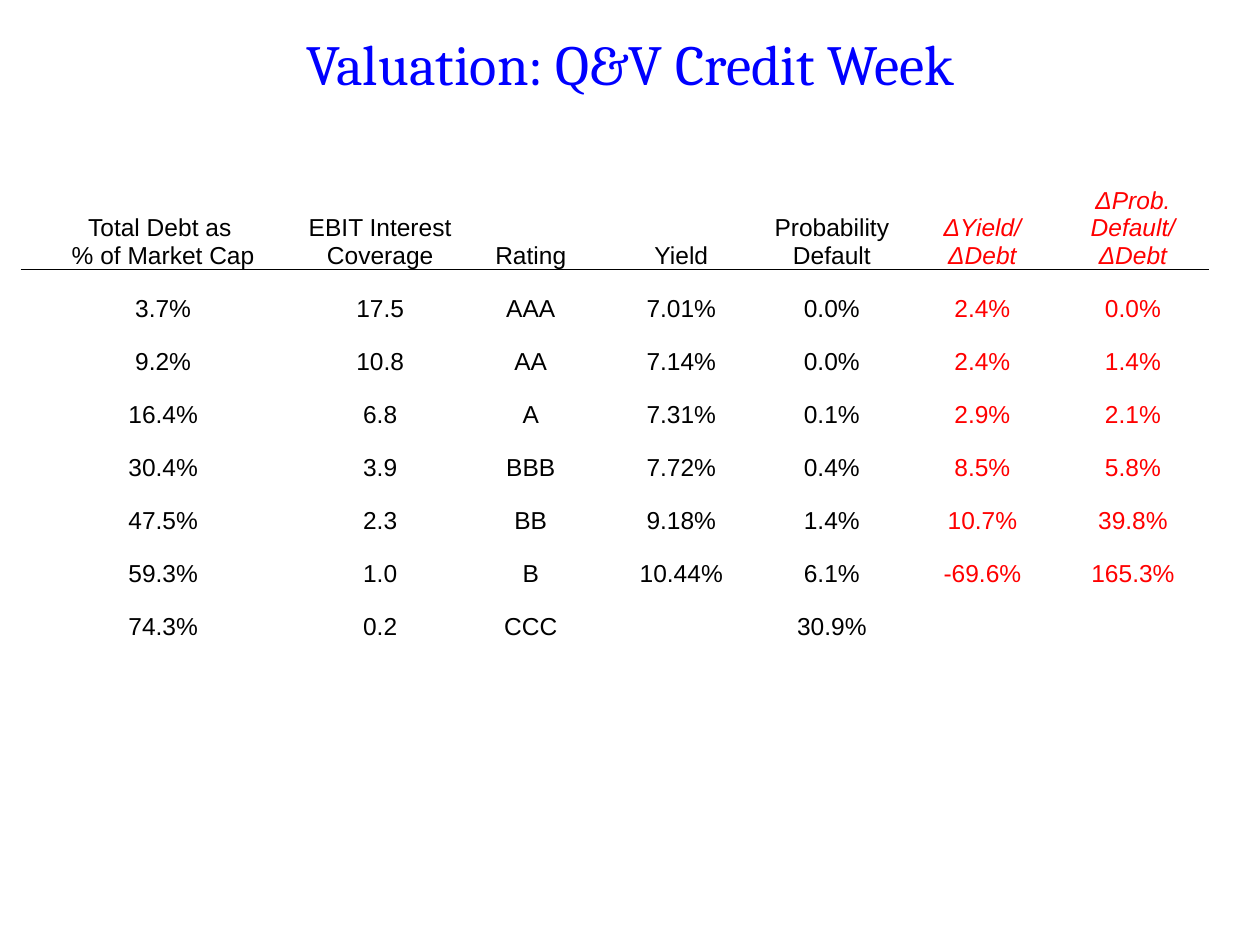
from lxml import etree
from pptx import Presentation
from pptx.dml.color import RGBColor
from pptx.enum import text
from pptx.oxml import ns
from pptx.util import Inches, Pt

BLACK, RED, BLUE = "000000", "FF0000", "0000FF"


def style_text(frame, font_name, size, color, italic=False):
    """Centre every paragraph, sit the text at the bottom and set its font."""
    frame.word_wrap = True
    frame.vertical_anchor = text.MSO_ANCHOR.BOTTOM
    for paragraph in frame.paragraphs:
        paragraph.alignment = text.PP_ALIGN.CENTER
        for run in paragraph.runs:
            run.font.name = font_name
            run.font.size = Pt(size)
            run.font.italic = italic
            run.font.color.rgb = RGBColor.from_string(color)


def add_rule(cell, side):
    """Draw a thin black border; side is lnT or lnB."""
    line = etree.Element(ns.qn(f"a:{side}"), w=str(Pt(0.5)))
    fill = etree.SubElement(line, ns.qn("a:solidFill"))
    etree.SubElement(fill, ns.qn("a:srgbClr"), val=BLACK)
    cell._tc.get_or_add_tcPr().insert(0, line)


presentation = Presentation()
presentation.slide_width = Inches(10)
presentation.slide_height = Inches(7.5)
slide = presentation.slides.add_slide(presentation.slide_layouts[6])

title = slide.shapes.add_textbox(0, Inches(0.33), Inches(10), Inches(0.5)).text_frame
title.text = "Valuation: Q&V Credit Week"
title.margin_left = title.margin_right = Inches(0.12)
title.margin_top = title.margin_bottom = Inches(0.06)
style_text(title, "Cambria", 32.4, BLUE)

ratings = [
    ["Total Debt as \n% of Market Cap", "EBIT Interest Coverage", "Rating", "Yield",
     "Probability Default", "ΔYield/\nΔDebt", "ΔProb. Default/\nΔDebt"],
    ["3.7%", "17.5", "AAA", "7.01%", "0.0%", "2.4%", "0.0%"],
    ["9.2%", "10.8", "AA", "7.14%", "0.0%", "2.4%", "1.4%"],
    ["16.4%", "6.8", "A", "7.31%", "0.1%", "2.9%", "2.1%"],
    ["30.4%", "3.9", "BBB", "7.72%", "0.4%", "8.5%", "5.8%"],
    ["47.5%", "2.3", "BB", "9.18%", "1.4%", "10.7%", "39.8%"],
    ["59.3%", "1.0", "B", "10.44%", "6.1%", "-69.6%", "165.3%"],
    ["74.3%", "0.2", "CCC", "", "30.9%", "", ""],
]
FIRST_DELTA_COLUMN = 5
table_width, table_height = Inches(9.42), Inches(4.17)
debt_width, header_height = Inches(2.25), Inches(1.22)

table = slide.shapes.add_table(len(ratings), len(ratings[0]), Inches(0.17),
                               Inches(0.92), table_width, table_height).table
table.first_row = False
table.horz_banding = False

for index, column in enumerate(table.columns):
    column.width = (table_width - debt_width) // 6 if index else debt_width
for index, row in enumerate(table.rows):
    row.height = (table_height - header_height) // 7 if index else header_height

for row_index, values in enumerate(ratings):
    is_header = row_index == 0
    for column_index, value in enumerate(values):
        is_delta = column_index >= FIRST_DELTA_COLUMN
        cell = table.cell(row_index, column_index)
        cell.fill.background()
        cell.margin_left = cell.margin_right = cell.margin_top = Inches(0.01)
        cell.margin_bottom = 0
        cell.vertical_anchor = text.MSO_ANCHOR.BOTTOM
        cell.text_frame.text = value
        style_text(cell.text_frame, "Arial", 14, RED if is_delta else BLACK,
                   italic=is_header and is_delta)
        if row_index < 2:
            add_rule(cell, "lnB" if is_header else "lnT")

presentation.save("out.pptx")
